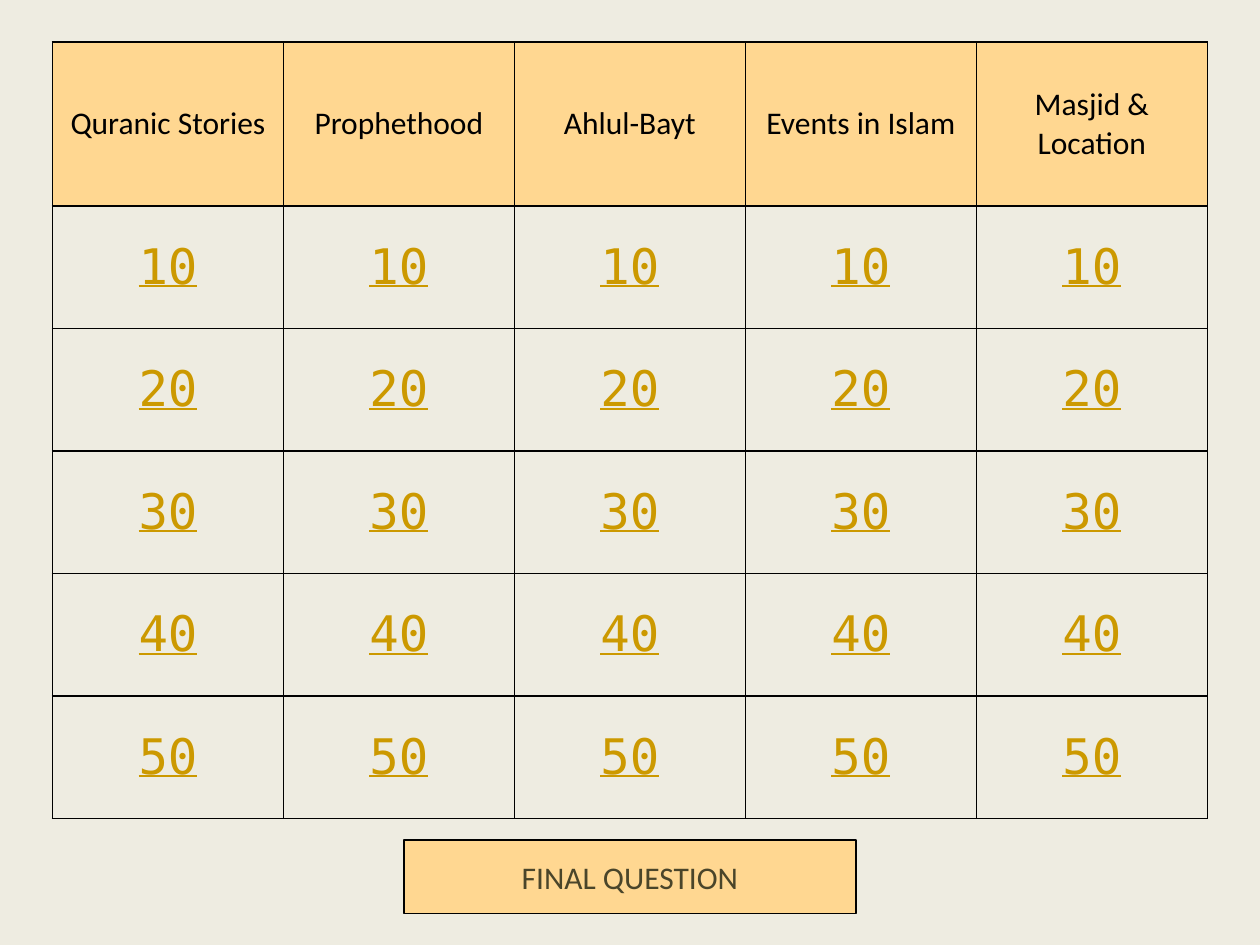
from dataclasses import dataclass

from lxml import etree
from pptx import Presentation
from pptx.dml.color import RGBColor
from pptx.enum import shapes, text
from pptx.oxml import ns
from pptx.util import Pt


@dataclass(frozen=True)
class Theme:
    background: RGBColor = RGBColor(0xEE, 0xEC, 0xE1)
    panel: RGBColor = RGBColor(0xFF, 0xD7, 0x91)
    border: RGBColor = RGBColor(0, 0, 0)
    border_width: float = 1


@dataclass(frozen=True)
class TextStyle:
    name: str
    size: float
    color: RGBColor
    underline: bool = False


THEME = Theme()
CATEGORY = TextStyle("Calibri", 18, RGBColor(0, 0, 0))
POINTS = TextStyle("DejaVu Sans Mono", 28, RGBColor(0xCC, 0x99, 0x00), True)
FINAL = TextStyle("Calibri", 18, RGBColor(0x4A, 0x45, 0x2A))

CATEGORIES = ["Quranic Stories", "Prophethood", "Ahlul-Bayt",
              "Events in Islam", "Masjid & Location"]
POINT_VALUES = [10, 20, 30, 40, 50]

BOARD_LEFT, BOARD_TOP = 30, 24
COLUMN_WIDTH, HEADER_HEIGHT, ROW_HEIGHT = 132, 93.75, 70


def write_centred(frame, words: str, style: TextStyle) -> None:
    paragraph = frame.paragraphs[0]
    paragraph.text = words
    paragraph.alignment = text.PP_ALIGN.CENTER
    font = paragraph.runs[0].font
    formats = {"name": style.name, "size": Pt(style.size), "bold": False,
               "underline": style.underline}
    for attribute, value in formats.items():
        setattr(font, attribute, value)
    font.color.rgb = style.color


def draw_borders(cell) -> None:
    properties = cell._tc.get_or_add_tcPr()
    for position, side in enumerate(("lnL", "lnR", "lnT", "lnB")):
        line = etree.Element(ns.qn(f"a:{side}"), w=str(Pt(THEME.border_width)))
        fill = etree.SubElement(line, ns.qn("a:solidFill"))
        etree.SubElement(fill, ns.qn("a:srgbClr"), val=str(THEME.border))
        properties.insert(position, line)


def fill_cell(cell, words: str, style: TextStyle, shaded: bool) -> None:
    cell.vertical_anchor = text.MSO_ANCHOR.MIDDLE
    if shaded:
        cell.fill.solid()
        cell.fill.fore_color.rgb = THEME.panel
    else:
        cell.fill.background()
    draw_borders(cell)
    write_centred(cell.text_frame, words, style)


def add_board(slide) -> None:
    rows, columns = len(POINT_VALUES) + 1, len(CATEGORIES)
    board = slide.shapes.add_table(
        rows, columns, Pt(BOARD_LEFT), Pt(BOARD_TOP),
        Pt(COLUMN_WIDTH * columns),
        Pt(HEADER_HEIGHT + ROW_HEIGHT * len(POINT_VALUES))).table
    board.first_row = board.horz_banding = False
    for column in board.columns:
        column.width = Pt(COLUMN_WIDTH)
    for index, row in enumerate(board.rows):
        row.height = Pt(ROW_HEIGHT if index else HEADER_HEIGHT)
    for column, category in enumerate(CATEGORIES):
        fill_cell(board.cell(0, column), category, CATEGORY, shaded=True)
        for row, points in enumerate(POINT_VALUES, start=1):
            fill_cell(board.cell(row, column), str(points), POINTS, shaded=False)


def add_final_button(slide) -> None:
    button = slide.shapes.add_shape(
        shapes.MSO_SHAPE.RECTANGLE, Pt(231), Pt(480), Pt(258), Pt(42))
    button.shadow.inherit = False
    button.fill.solid()
    button.fill.fore_color.rgb = THEME.panel
    button.line.color.rgb = THEME.border
    button.line.width = Pt(THEME.border_width)
    button.text_frame.vertical_anchor = text.MSO_ANCHOR.MIDDLE
    write_centred(button.text_frame, "FINAL QUESTION", FINAL)


def main() -> None:
    deck = Presentation()
    deck.slide_width, deck.slide_height = Pt(720), Pt(540)
    slide = deck.slides.add_slide(deck.slide_layouts[6])
    slide.background.fill.solid()
    slide.background.fill.fore_color.rgb = THEME.background
    add_board(slide)
    add_final_button(slide)
    deck.save("out.pptx")


if __name__ == "__main__":
    main()
